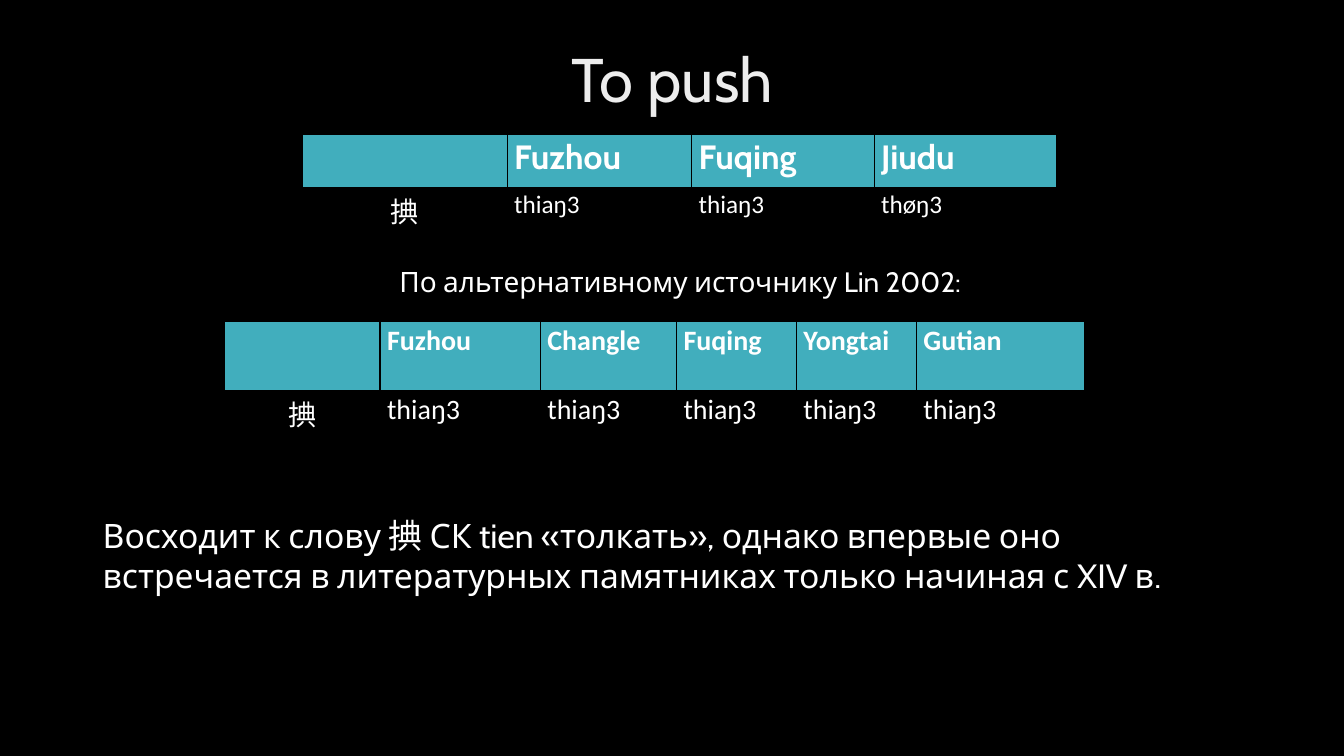
import pptx
import pptx.dml.color
import pptx.enum.text
import pptx.oxml
import pptx.oxml.ns
import pptx.util
from pptx.util import Inches

CENTER = pptx.enum.text.PP_ALIGN.CENTER
LEFT = pptx.enum.text.PP_ALIGN.LEFT
NS = pptx.oxml.ns.nsdecls("a")


def rgb(value):
    return pptx.dml.color.RGBColor.from_string(value)


def write(p, text, align, color="FFFFFF", **formats):
    p.alignment = align
    r = p.add_run()
    r.text = text
    r.font.color.rgb = rgb(color)
    for name, value in formats.items():
        setattr(r.font, name, value)
    return r


prs = pptx.Presentation()
prs.slide_width, prs.slide_height = Inches(13.33), Inches(7.5)
s = prs.slides.add_slide(prs.slide_layouts[5])
s.background.fill.solid()
s.background.fill.fore_color.rgb = rgb("000000")

title = s.shapes.title
title.left, title.top = Inches(0.92), Inches(0.4)
title.width, title.height = Inches(11.5), Inches(0.83)
tf = title.text_frame
tf.vertical_anchor = pptx.enum.text.MSO_ANCHOR.MIDDLE
p = tf.paragraphs[0]
p.line_spacing = 0.9
r = write(p, "To push", CENTER, size=pptx.util.Pt(44), name="Cabin")
r.font.fill.gradient()
r.font.fill.gradient_angle = 280
stops = r.font.fill.gradient_stops
stops[0].color.rgb, stops[0].position = rgb("BFBFBF"), 0
stops[1].color.rgb, stops[1].position = rgb("FFFFFF"), 1
middle = pptx.oxml.parse_xml(f'<a:gs {NS} pos="28000"><a:srgbClr val="EDEDED"/></a:gs>')
r.font.fill._xPr.find(".//" + pptx.oxml.ns.qn("a:gsLst")).insert(1, middle)

tables = [
    {
        "left": 3, "top": 1.33,
        "columns": [2.03, 1.83, 1.81, 1.81], "heights": [0.53, 0.55],
        "rows": [["", "Fuzhou", "Fuqing", "Jiudu"],
                 ["捵", "thiaŋ3", "thiaŋ3", "thøŋ3"]],
        "header": {"size": 24, "name": "Cabin"}, "hanzi": 20, "reading": 18,
    },
    {
        "left": 2.23, "top": 3.19,
        "columns": [1.54, 1.59, 1.35, 1.19, 1.19, 1.67], "heights": [0.68, 0.68],
        "rows": [["", "Fuzhou", "Changle", "Fuqing", "Yongtai", "Gutian"],
                 ["捵"] + ["thiaŋ3"] * 5],
        "header": {"size": 20, "name": "Calibri"}, "hanzi": 20, "reading": 20,
    },
]
for t in tables:
    columns, heights, rows = t["columns"], t["heights"], t["rows"]
    table = s.shapes.add_table(
        len(rows), len(columns), Inches(t["left"]), Inches(t["top"]),
        Inches(sum(columns)), Inches(sum(heights))).table
    for i, width in enumerate(columns):
        table.columns[i].width = Inches(width)
    for i, row in enumerate(rows):
        table.rows[i].height = Inches(heights[i])
        for j, text in enumerate(row):
            cell = table.cell(i, j)
            cell.margin_left = cell.margin_right = Inches(0.07)
            cell.margin_top = cell.margin_bottom = 0
            tcPr = cell._tc.get_or_add_tcPr()
            for side in ("lnL", "lnR", "lnT", "lnB"):
                tcPr.append(pptx.oxml.parse_xml(
                    f'<a:{side} {NS} w="12700"><a:solidFill>'
                    f'<a:srgbClr val="000000"/></a:solidFill></a:{side}>'))
            if i == 0:
                cell.fill.solid()
                cell.fill.fore_color.rgb = rgb("41AEBD")
                size, name = t["header"]["size"], t["header"]["name"]
            else:
                cell.fill.background()
                size, name = t["hanzi"] if j == 0 else t["reading"], "Calibri"
            if text:
                p = cell.text_frame.paragraphs[0]
                p.line_spacing = 1.07
                write(p, text, CENTER if j == 0 else LEFT,
                      size=pptx.util.Pt(size), name=name, bold=i == 0)

notes = [
    (2.35, 2.58, 8.79, 0.44, 20, CENTER, "По альтернативному источнику Lin 2002:"),
    (0.92, 5.06, 11.5, 0.94, 24, LEFT,
     "Восходит к слову 捵 СК tien «толкать», однако впервые оно "
     "встречается в литературных памятниках только начиная с XIV в."),
]
for left, top, width, height, size, align, text in notes:
    sp = s.shapes.add_textbox(Inches(left), Inches(top), Inches(width), Inches(height))
    tf = sp.text_frame
    tf.word_wrap = True
    tf.auto_size = pptx.enum.text.MSO_AUTO_SIZE.SHAPE_TO_FIT_TEXT
    write(tf.paragraphs[0], text, align, size=pptx.util.Pt(size), name="Cabin")

prs.save("out.pptx")
